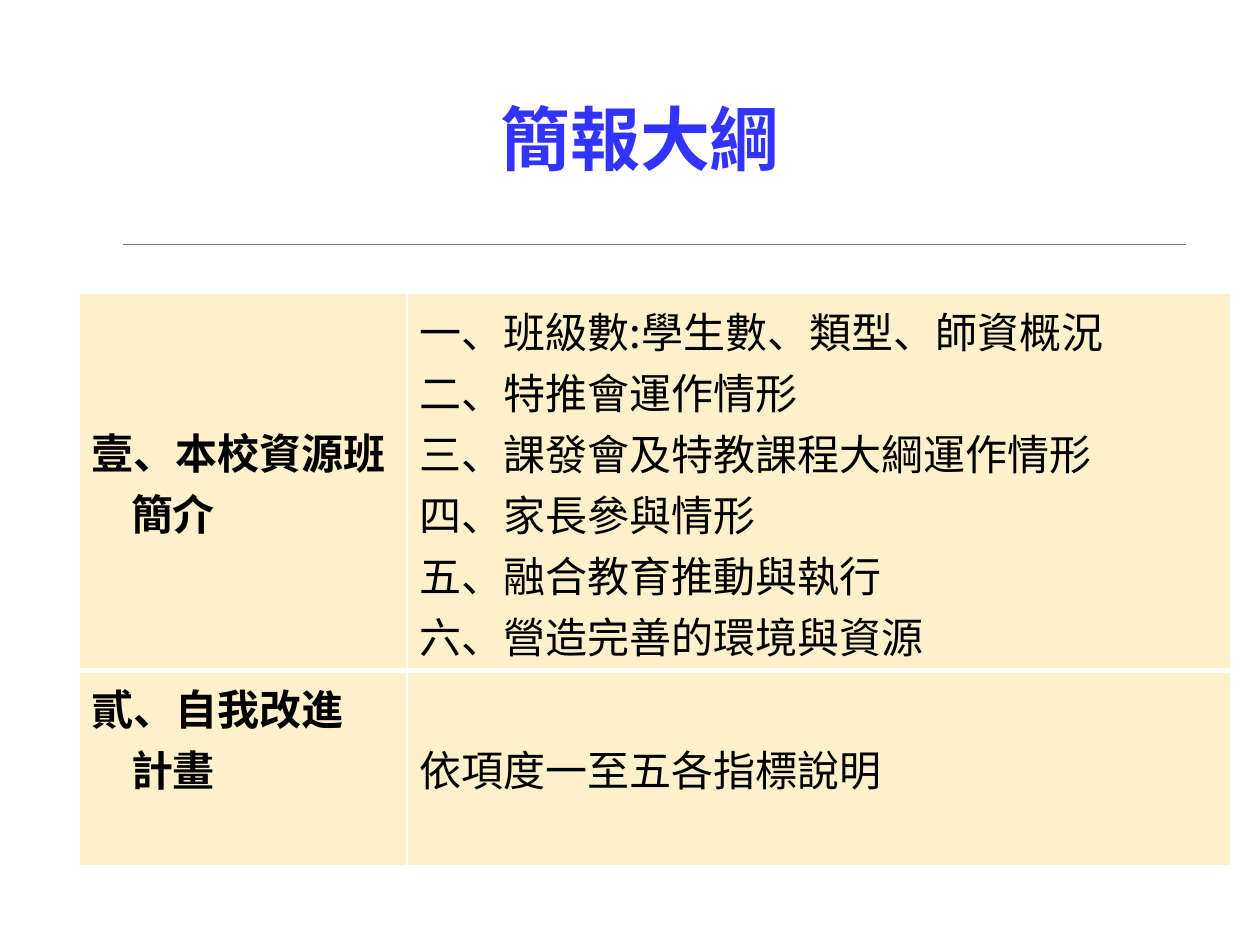
from lxml import etree
from pptx import Presentation
from pptx.dml.color import RGBColor
from pptx.enum.shapes import MSO_CONNECTOR
from pptx.enum.text import MSO_ANCHOR, PP_ALIGN
from pptx.oxml.ns import qn
from pptx.util import Inches, Pt

STRAIGHT = MSO_CONNECTOR.STRAIGHT
TOP, MIDDLE = MSO_ANCHOR.TOP, MSO_ANCHOR.MIDDLE
LEFT, CENTER = PP_ALIGN.LEFT, PP_ALIGN.CENTER

WIDTH, HEIGHT = 10, 7.5
FONT = "Noto Sans CJK SC"
BLUE, RULE, CREAM, WHITE, BLACK = "3333FF", "6E79A1", "FDF0CA", "FFFFFF", "000000"
CONTINUATION_INDENT = 0.31

TITLE_BOX = (0.83, 0.29, 8.5, 1.61)
RULE_BOX = (0.98, 1.94, 8.43, 0)
OUTLINE_BOX = (0.63, 2.33, 9.14, 4.54)
COLUMN_SHARES = (2.6 / 9.14, 6.54 / 9.14)
ROW_SHARES = (2.99 / 4.54, 1.55 / 4.54)

OUTLINE = [
    {
        "heading": ["壹、本校資源班", "簡介"],
        "anchor": MIDDLE,
        "items": [
            "一、班級數:學生數、類型、師資概況",
            "二、特推會運作情形",
            "三、課發會及特教課程大綱運作情形",
            "四、家長參與情形",
            "五、融合教育推動與執行",
            "六、營造完善的環境與資源",
        ],
        "items_anchor": TOP,
        "bottom_border": 3,
    },
    {
        "heading": ["貳、自我改進", "計畫"],
        "anchor": TOP,
        "items": ["依項度一至五各指標說明"],
        "items_anchor": MIDDLE,
        "bottom_border": 1,
    },
]


def color(value):
    """Turn a hex string into a colour."""
    return RGBColor.from_string(value)


def write(text_frame, lines, size, bold, fill=BLACK, alignment=LEFT, indent=0):
    """Write one paragraph per line, indenting every line after the first."""
    text_frame.word_wrap = True
    for index, line in enumerate(lines):
        paragraph = text_frame.paragraphs[0] if index == 0 else text_frame.add_paragraph()
        paragraph.alignment = alignment
        if index and indent:
            paragraph._p.get_or_add_pPr().set("marL", str(Inches(indent)))
        run = paragraph.add_run()
        run.text = line
        for name, value in {"size": Pt(size), "bold": bold, "name": FONT}.items():
            setattr(run.font, name, value)
        run.font.color.rgb = color(fill)
        etree.SubElement(run._r.get_or_add_rPr(), qn("a:ea"), typeface=FONT)


def set_borders(cell, bottom):
    """Give a cell white borders with its own bottom width."""
    properties = cell._tc.get_or_add_tcPr()
    for side, width in {"lnL": 1, "lnR": 1, "lnT": 1, "lnB": bottom}.items():
        border = etree.SubElement(properties, qn(f"a:{side}"), w=str(Pt(width)))
        fill = etree.SubElement(border, qn("a:solidFill"))
        etree.SubElement(fill, qn("a:srgbClr"), val=WHITE)


def add_title(slide, box):
    """Place the slide title in its box."""
    shape = slide.shapes.add_textbox(*map(Inches, box))
    shape.text_frame.vertical_anchor = MIDDLE
    write(shape.text_frame, ["簡報大綱"], 40, True, BLUE, CENTER)


def add_rule(slide, box):
    """Draw the thin rule along the top of its box."""
    left, top, width, height = box
    ends = (left, top, left + width, top + height)
    connector = slide.shapes.add_connector(STRAIGHT, *map(Inches, ends))
    connector.line.color.rgb = color(RULE)
    connector.line.width = Pt(0.75)
    etree.SubElement(connector._element.spPr, qn("a:effectLst"))


def fill_cell(cell, lines, anchor, bold, bottom):
    """Format one outline cell and write its lines."""
    cell.vertical_anchor = anchor
    set_borders(cell, bottom)
    cell.fill.solid()
    cell.fill.fore_color.rgb = color(CREAM)
    write(cell.text_frame, lines, 24, bold, indent=CONTINUATION_INDENT if bold else 0)


def add_outline(slide, box):
    """Place the outline table, one section to a row."""
    frame = slide.shapes.add_table(len(OUTLINE), len(COLUMN_SHARES), *map(Inches, box))
    table = frame.table
    table.first_row = table.horz_banding = False
    for column, share in zip(table.columns, COLUMN_SHARES):
        column.width = Inches(box[2] * share)
    for row, share, section in zip(table.rows, ROW_SHARES, OUTLINE):
        row.height = Inches(box[3] * share)
        heading, items = row.cells
        bottom = section["bottom_border"]
        fill_cell(heading, section["heading"], section["anchor"], True, bottom)
        fill_cell(items, section["items"], section["items_anchor"], False, bottom)


def main():
    """Build and save the outline slide."""
    presentation = Presentation()
    presentation.slide_width, presentation.slide_height = Inches(WIDTH), Inches(HEIGHT)
    slide = presentation.slides.add_slide(presentation.slide_layouts[6])
    add_title(slide, TITLE_BOX)
    add_rule(slide, RULE_BOX)
    add_outline(slide, OUTLINE_BOX)
    presentation.save("out.pptx")


if __name__ == "__main__":
    main()
